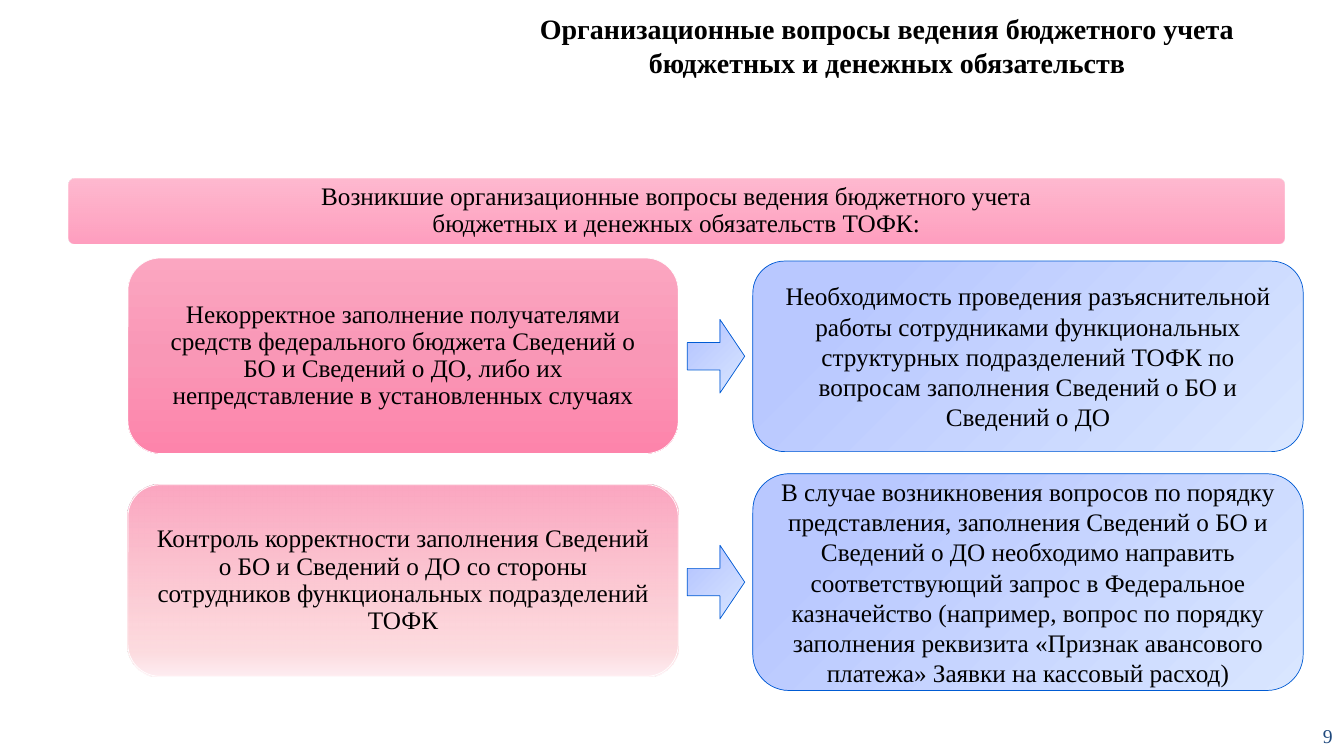
from dataclasses import dataclass

from lxml.etree import SubElement
from pptx import Presentation
from pptx.dml.color import RGBColor
from pptx.enum.shapes import MSO_SHAPE as Geometry
from pptx.enum.text import MSO_ANCHOR as Anchor, PP_ALIGN as Align
from pptx.oxml.ns import qn
from pptx.util import Pt


@dataclass(frozen=True)
class Theme:
    font: str = "Times New Roman"
    text: str = "000000"
    number: str = "1F497D"
    pink_line: str = "FFFFFF"
    blue_line: str = "005BD3"
    title_size: int = 20
    body_size: int = 18
    number_size: int = 14
    # Gradient stops: position %, colour, opacity %
    header_stops: tuple = ((0, "FFA9C5", 80), (50, "FF99BA", 80), (100, "FF87B0", 80))
    pink_stops: tuple = ((0, "FBA6C1", 100), (50, "F997B6", 100), (100, "FD84AB", 100))
    pale_stops: tuple = ((0, "FBA6C1", 100), (87, "FBBAC1", 50), (100, "FFDEE7", 50))
    blue_stops: tuple = ((18, "B9C8FF", 100), (100, "D9E6FF", 100))


THEME = Theme()

# Columns: left edge; the boxes of both columns share one width
BOX_WIDTH = 393.1
ISSUE_LEFT, ARROW_LEFT, ANSWER_LEFT = 91.4, 491, 537.8
ARROW_WIDTH, ARROW_HEIGHT = 41, 52.6

# Rows: issue (text, top, height, stops), arrow top, answer (text, top, height)
ROWS = [
    (("Некорректное заполнение получателями средств федерального бюджета "
      "Сведений о БО и Сведений о ДО, либо их непредставление в "
      "установленных случаях", 184.3, 139.7, THEME.pink_stops),
     228.2,
     ("Необходимость проведения разъяснительной работы сотрудниками "
      "функциональных структурных подразделений ТОФК по вопросам заполнения "
      "Сведений о БО и Сведений о ДО", 186.5, 136.1)),
    (("Контроль корректности заполнения Сведений о БО и Сведений о ДО со "
      "стороны сотрудников функциональных подразделений ТОФК",
      346.3, 136.8, THEME.pale_stops),
     389.5,
     ("В случае возникновения вопросов по порядку представления, заполнения "
      "Сведений о БО и Сведений о ДО необходимо направить соответствующий "
      "запрос в Федеральное казначейство (например, вопрос по порядку "
      "заполнения реквизита «Признак авансового платежа» Заявки на кассовый "
      "расход)", 338.4, 154.8)),
]


def set_gradient(shape, stops, radial):
    """Fill top to bottom, or outwards from the top left corner if radial."""
    shape.fill.background()
    properties = shape.fill._xPr
    no_fill = properties.find(qn("a:noFill"))
    gradient = SubElement(properties, qn("a:gradFill"), rotWithShape="1")
    properties.replace(no_fill, gradient)
    stop_list = SubElement(gradient, qn("a:gsLst"))
    for position, color, opacity in stops:
        stop = SubElement(stop_list, qn("a:gs"), pos=str(position * 1000))
        rgb = SubElement(stop, qn("a:srgbClr"), val=color)
        if opacity < 100:
            SubElement(rgb, qn("a:alpha"), val=str(opacity * 1000))
    if radial:
        circle = SubElement(gradient, qn("a:path"), {"path": "circle"})
        SubElement(circle, qn("a:fillToRect"), r="100000", b="100000")
    else:
        SubElement(gradient, qn("a:lin"), ang="5400000", scaled="0")


def write(shape, lines, size, color=THEME.text, bold=False, align=Align.CENTER,
          anchor=Anchor.MIDDLE, spacing=None, insets=(7.2, 3.6)):
    frame = shape.text_frame
    frame.word_wrap = True
    frame.vertical_anchor = anchor
    frame.margin_left = frame.margin_right = Pt(insets[0])
    frame.margin_top = frame.margin_bottom = Pt(insets[1])
    for index, line in enumerate(lines):
        paragraph = frame.add_paragraph() if index else frame.paragraphs[0]
        paragraph.alignment = align
        if spacing:
            paragraph.line_spacing = spacing
        run = paragraph.add_run()
        run.text = line
        run.font.name = THEME.font
        run.font.size = Pt(size)
        run.font.bold = bold
        run.font.color.rgb = RGBColor.from_string(color)


def add_text(slide, box, lines, size, **style):
    write(slide.shapes.add_textbox(*map(Pt, box)), lines, size, **style)


def add_figure(slide, geometry, box, adjustments, stops, line=None, radial=False):
    shape = slide.shapes.add_shape(geometry, *map(Pt, box))
    shape.shadow.inherit = False
    for index, value in enumerate(adjustments):
        shape.adjustments[index] = value
    set_gradient(shape, stops, radial)
    if line:
        shape.line.color.rgb = RGBColor.from_string(line)
        shape.line.width = Pt(0.5)
    else:
        shape.line.fill.background()
    return shape


def add_header(slide, lines):
    bar = add_figure(slide, Geometry.ROUNDED_RECTANGLE, (49, 127.4, 868.3, 46.8),
                     [0.1], THEME.header_stops)
    write(bar, lines, THEME.body_size, spacing=0.9, insets=(2.9, 2.2))


def add_issue(slide, text, top, height, stops):
    box = add_figure(slide, Geometry.ROUNDED_RECTANGLE,
                     (ISSUE_LEFT, top, BOX_WIDTH, height), [0.167], stops,
                     THEME.pink_line)
    write(box, [text], THEME.body_size, spacing=0.9, insets=(10, 10))


def add_arrow(slide, top):
    add_figure(slide, Geometry.RIGHT_ARROW,
               (ARROW_LEFT, top, ARROW_WIDTH, ARROW_HEIGHT), [0.372, 0.432],
               THEME.blue_stops, THEME.blue_line, radial=True)


def add_answer(slide, text, top, height):
    box = add_figure(slide, Geometry.ROUNDED_RECTANGLE,
                     (ANSWER_LEFT, top, BOX_WIDTH, height), [0.167],
                     THEME.blue_stops, THEME.blue_line, radial=True)
    write(box, [text], THEME.body_size)


def main():
    presentation = Presentation()
    presentation.slide_width, presentation.slide_height = Pt(960), Pt(540)
    slide = presentation.slides.add_slide(presentation.slide_layouts[6])

    # Slide number and title
    add_text(slide, (925.9, 514.1, 33.1, 23), ["9"], THEME.number_size,
             color=THEME.number, align=Align.RIGHT)
    add_text(slide, (308.2, 5, 650.9, 55.4),
             ["Организационные вопросы ведения бюджетного учета",
              "бюджетных и денежных обязательств"],
             THEME.title_size, bold=True, anchor=Anchor.TOP)

    # Header bar
    add_header(slide, ["Возникшие организационные вопросы ведения бюджетного учета",
                       "бюджетных и денежных обязательств ТОФК:"])

    # Issues, each with an arrow to its answer
    for issue, arrow_top, answer in ROWS:
        add_issue(slide, *issue)
        add_arrow(slide, arrow_top)
        add_answer(slide, *answer)

    presentation.save("out.pptx")


if __name__ == "__main__":
    main()
